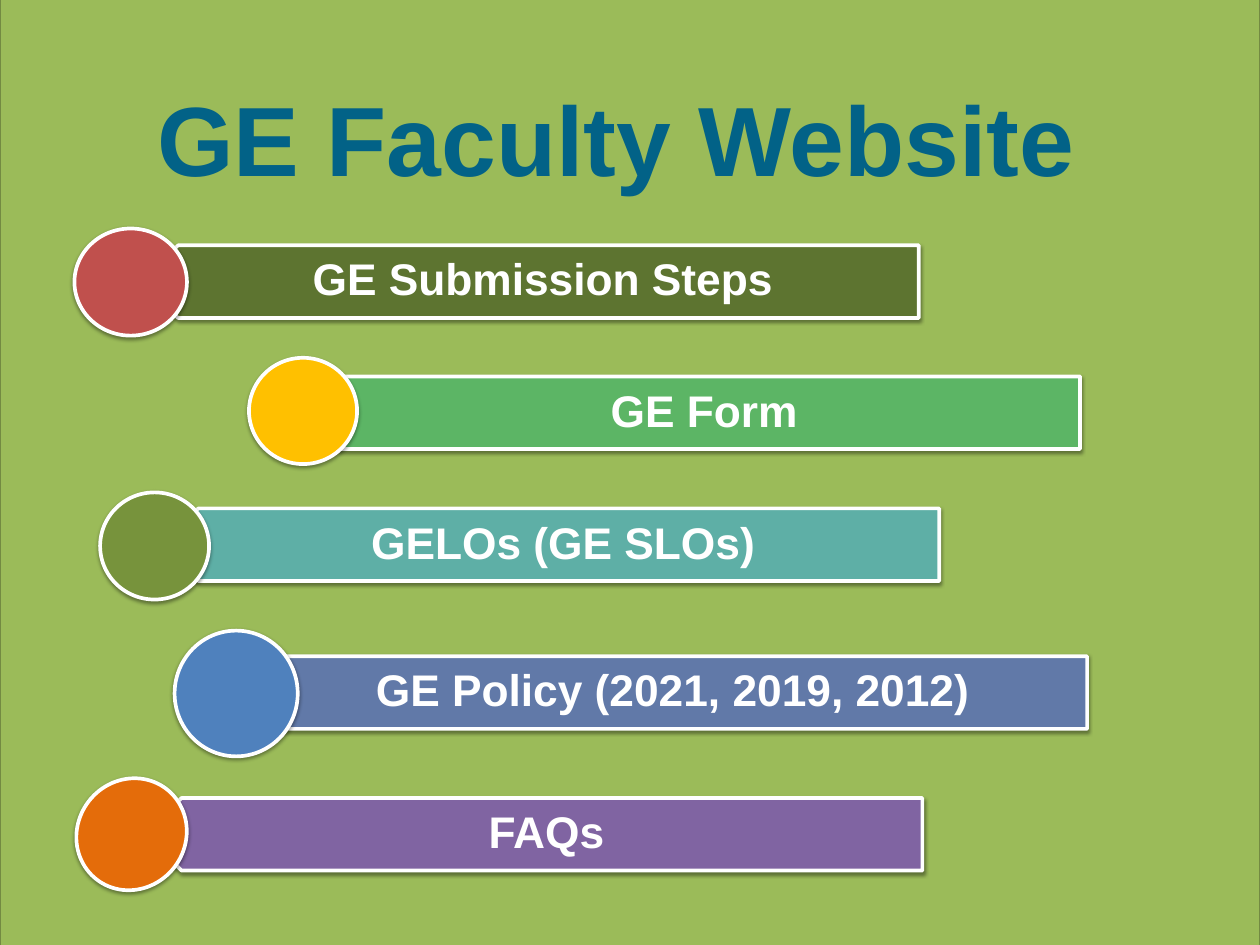
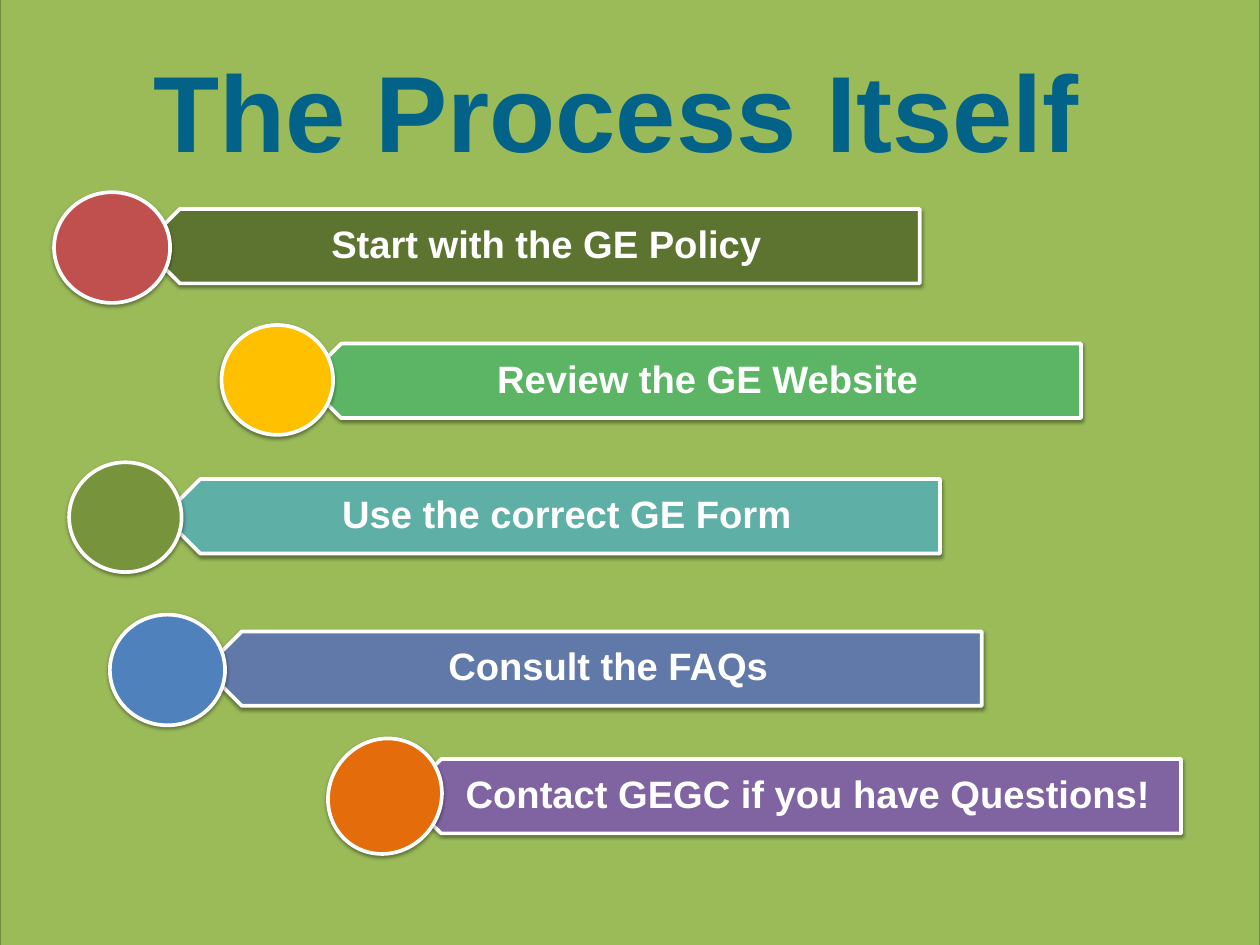
from dataclasses import dataclass

import pptx
import pptx.dml.color
import pptx.enum.shapes
import pptx.enum.text
import pptx.oxml
import pptx.oxml.ns
import pptx.util
from pptx.util import Inches

Shape = pptx.enum.shapes.MSO_SHAPE


@dataclass(frozen=True)
class Theme:
    font: str = "Arial"
    backdrop: str = "9BBB59"
    backdrop_edge: str = "738A42"
    title: str = "026287"
    light: str = "FFFFFF"
    bars: tuple = ("5D7430", "5CB565", "5EAFA6", "6179A8", "8064A2")
    discs: tuple = ("C0504D", "FFC000", "77933C", "4F81BD", "E46C0A")
    edge: float = 3
    backdrop_edge_width: float = 2
    website_title: int = 80
    process_title: int = 88
    website_label: int = 36
    process_label: int = 31


THEME = Theme()

SHADOW = (
    f'<a:effectLst {pptx.oxml.ns.nsdecls("a")}>'
    '<a:outerShdw blurRad="39370" dist="20320" dir="5400000" rotWithShape="0">'
    '<a:srgbClr val="000000"><a:alpha val="38000"/></a:srgbClr>'
    '</a:outerShdw></a:effectLst>'
)


def rgb(value):
    return pptx.dml.color.RGBColor.from_string(value)


class Deck:
    def __init__(self, theme, width, height):
        self.theme = theme
        self.presentation = pptx.Presentation()
        self.presentation.slide_width = Inches(width)
        self.presentation.slide_height = Inches(height)
        self.slide = None

    def start_slide(self):
        blank = self.presentation.slide_layouts[6]
        self.slide = self.presentation.slides.add_slide(blank)
        self.filled(Shape.RECTANGLE, (0, -0.17, 14.22, 11.08), self.theme.backdrop,
                    self.theme.backdrop_edge, self.theme.backdrop_edge_width)

    def filled(self, outline, box, fill, edge, edge_width):
        shape = self.slide.shapes.add_shape(outline, *map(Inches, box))
        shape.shadow.inherit = False
        shape.fill.solid()
        shape.fill.fore_color.rgb = rgb(fill)
        shape.line.color.rgb = rgb(edge)
        shape.line.width = pptx.util.Pt(edge_width)
        return shape

    def raised(self, outline, box, fill):
        shape = self.filled(outline, box, fill, self.theme.light, self.theme.edge)
        properties = shape._element.spPr
        flat = properties.find(pptx.oxml.ns.qn("a:effectLst"))
        properties.replace(flat, pptx.oxml.parse_xml(SHADOW))
        return shape

    def set_label(self, shape, text, size, color, insets, anchor):
        frame = shape.text_frame
        frame.word_wrap = True
        frame.vertical_anchor = anchor
        (frame.margin_left, frame.margin_top,
         frame.margin_right, frame.margin_bottom) = map(Inches, insets)
        frame.text = text
        paragraph = frame.paragraphs[0]
        paragraph.alignment = pptx.enum.text.PP_ALIGN.CENTER
        font = paragraph.runs[0].font
        font.name = self.theme.font
        font.size = pptx.util.Pt(size)
        font.bold = True
        font.color.rgb = rgb(color)
        return paragraph

    def title(self, text, top, size):
        heading = self.slide.shapes.add_textbox(*map(Inches, (1.19, top, 11.53, 1.25)))
        self.set_label(heading, text, size, self.theme.title, (0.1, 0.17, 0.1, 0.05),
                       pptx.enum.text.MSO_ANCHOR.TOP)

    def bar(self, text, box, fill, size, insets):
        banner = self.raised(Shape.PENTAGON, box, fill)
        banner._element.spPr.xfrm.set("flipH", "1")
        paragraph = self.set_label(banner, text, size, self.theme.light, insets,
                                   pptx.enum.text.MSO_ANCHOR.MIDDLE)
        paragraph.line_spacing = 0.9

    def disc(self, box, fill, rotation):
        self.raised(Shape.OVAL, box, fill).rotation = rotation

    def banners(self, rows, bar_height, size, insets):
        rotations = (0, 0, 0, 0, 307.6)
        for row, bar_fill, disc_fill, rotation in zip(
                rows, self.theme.bars, self.theme.discs, rotations):
            text, (left, top, width), disc_box = row
            self.bar(text, (left, top, width, bar_height), bar_fill, size, insets)
            self.disc(disc_box, disc_fill, rotation)


BAR_WIDTH = 8.77

WEBSITE_SECTIONS = (
    ("GE Submission Steps", (1.6, 2.77, BAR_WIDTH), (0.84, 2.58, 1.27, 1.21)),
    ("GE Form", (3.42, 4.25, BAR_WIDTH), (2.81, 4.04, 1.22, 1.2)),
    ("GELOs (GE SLOs)", (1.83, 5.74, BAR_WIDTH), (1.13, 5.56, 1.23, 1.21)),
    ("GE Policy (2021, 2019, 2012)", (2.63, 7.41, 9.64), (1.97, 7.12, 1.39, 1.42)),
    ("FAQs", (1.64, 9.01, BAR_WIDTH), (0.84, 8.81, 1.29, 1.22)),
)

PROCESS_STEPS = (
    ("Start with the GE Policy", (1.61, 2.36, BAR_WIDTH), (0.61, 2.17, 1.31, 1.25)),
    ("Review the GE Website", (3.43, 3.88, BAR_WIDTH), (2.5, 3.67, 1.26, 1.24)),
    ("Use the correct GE Form", (1.84, 5.41, BAR_WIDTH), (0.78, 5.22, 1.27, 1.24)),
    ("Consult the FAQs", (2.31, 7.13, BAR_WIDTH), (1.24, 6.94, 1.3, 1.25)),
    ("Contact GEGC if you have Questions!", (4.56, 8.57, BAR_WIDTH),
     (3.68, 8.36, 1.33, 1.26)),
)


def main():
    deck = Deck(THEME, 14.22, 10.67)

    deck.start_slide()
    deck.banners(WEBSITE_SECTIONS, 0.82, THEME.website_label, (0.36, 0.15, 0.28, 0.15))
    deck.title("GE Faculty Website", 0.71, THEME.website_title)

    deck.start_slide()
    deck.banners(PROCESS_STEPS, 0.84, THEME.process_label, (0.37, 0.13, 0.24, 0.13))
    deck.title("The Process Itself", 0.33, THEME.process_title)

    deck.presentation.save("out.pptx")


if __name__ == "__main__":
    main()
